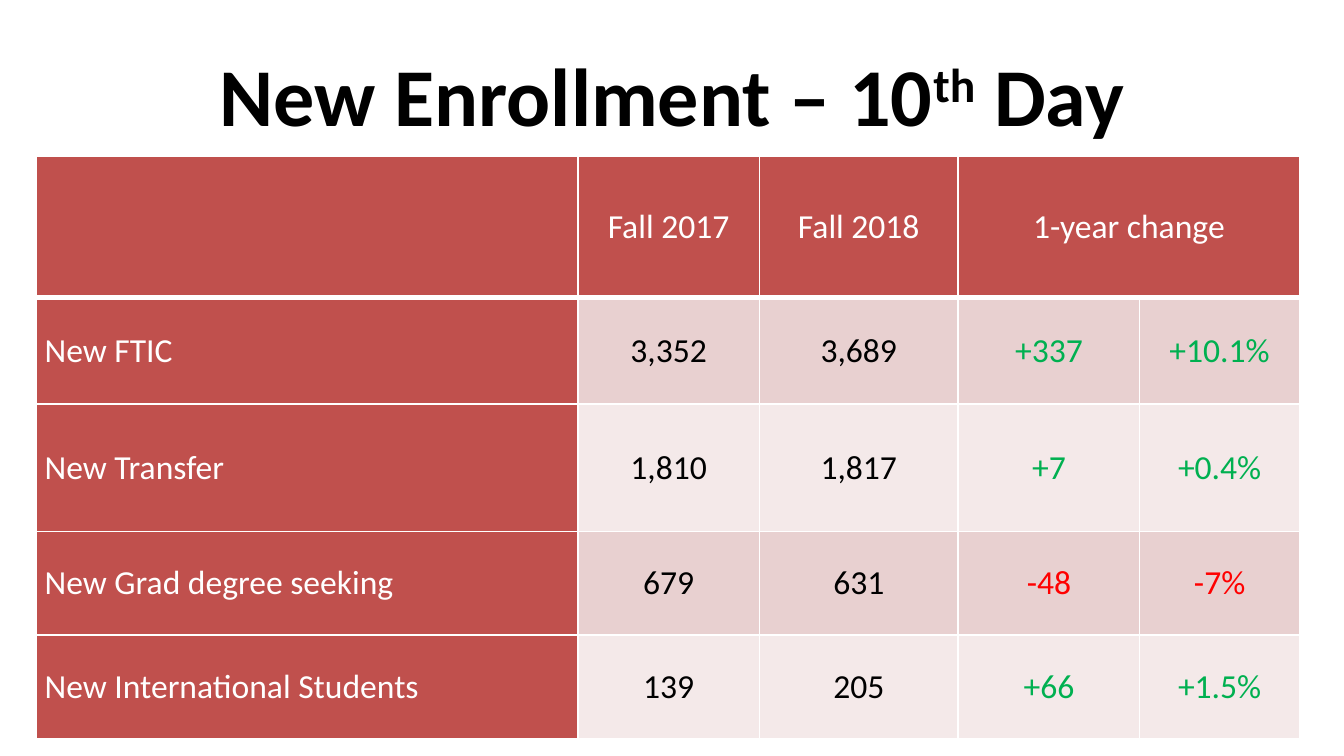
"""Build the new enrollment slide with its year-over-year table."""
from dataclasses import dataclass

from lxml import etree
from pptx import Presentation
from pptx.dml.color import RGBColor
from pptx.enum import text as t
from pptx.oxml import ns
from pptx.util import Pt

RED, WHITE, BLACK = "C0504D", "FFFFFF", "000000"
GAIN, LOSS = "00B050", "FF0000"
BANDS = ("E8D0D0", "F4E9E9")
COL_WIDTHS = (290.16, 97.2, 106.56, 97.2, 85.68)
ROW_HEIGHTS = (75.6, 56.88, 68.4, 55.44, 55.44)
HEADINGS = ("", "Fall 2017", "Fall 2018", "1-year change", "")


@dataclass
class Enrollment:
    group: str
    fall_2017: str
    fall_2018: str
    change: str
    percent: str


ENROLLMENTS = (
    Enrollment("New FTIC", "3,352", "3,689", "+337", "+10.1%"),
    Enrollment("New Transfer", "1,810", "1,817", "+7", "+0.4%"),
    Enrollment("New Grad degree seeking", "679", "631", "-48", "-7%"),
    Enrollment("New International Students", "139", "205", "+66", "+1.5%"),
)


def rgb(value: str) -> RGBColor:
    return RGBColor.from_string(value)


def add_run(p, text: str, *, size: float = 18, color: str = BLACK,
            bold: bool = False, baseline: int = 0) -> None:
    r = p.add_run()
    r.text = text
    r.font.name = "Calibri"
    r.font.size = Pt(size)
    r.font.bold = bold
    r.font.color.rgb = rgb(color)
    if baseline:
        r._r.get_or_add_rPr().set("baseline", str(baseline * 1000))


def set_borders(cell, bottom: float = 1) -> None:
    tc_pr = cell._tc.get_or_add_tcPr()
    for side, width in (("L", 1), ("R", 1), ("T", 1), ("B", bottom)):
        ln = etree.SubElement(tc_pr, ns.qn(f"a:ln{side}"), w=str(Pt(width)))
        fill = etree.SubElement(ln, ns.qn("a:solidFill"))
        etree.SubElement(fill, ns.qn("a:srgbClr"), val=WHITE)


def fill_cell(cell, text: str, *, fill: str, color: str,
              align=t.PP_ALIGN.CENTER, bottom: float = 1) -> None:
    set_borders(cell, bottom)
    cell.fill.solid()
    cell.fill.fore_color.rgb = rgb(fill)
    cell.vertical_anchor = t.MSO_ANCHOR.MIDDLE
    cell.margin_left = cell.margin_right = Pt(4.5)
    cell.margin_top = cell.margin_bottom = 0
    p = cell.text_frame.paragraphs[0]
    p.alignment = align
    if text:
        add_run(p, text, color=color)


def add_title(s) -> None:
    sp = s.shapes.title
    sp.left, sp.top, sp.width, sp.height = Pt(36), Pt(16.56), Pt(648), Pt(67.68)
    tf = sp.text_frame
    tf.auto_size = t.MSO_AUTO_SIZE.NONE
    tf.vertical_anchor = t.MSO_ANCHOR.MIDDLE
    p = tf.paragraphs[0]
    p.alignment = t.PP_ALIGN.CENTER
    for text, baseline in (("New Enrollment – 10", 0), ("th", 30), (" Day", 0)):
        add_run(p, text, size=44, bold=True, baseline=baseline)


def add_enrollment_table(s) -> None:
    table = s.shapes.add_table(
        len(ROW_HEIGHTS), len(COL_WIDTHS), Pt(19.44), Pt(83.88),
        Pt(sum(COL_WIDTHS)), Pt(sum(ROW_HEIGHTS))).table
    table.first_row = table.horz_banding = False
    for column, width in zip(table.columns, COL_WIDTHS):
        column.width = Pt(width)
    for row, height in zip(table.rows, ROW_HEIGHTS):
        row.height = Pt(height)
    for j, heading in enumerate(HEADINGS):
        fill_cell(table.cell(0, j), heading, fill=RED, color=WHITE, bottom=3)
    table.cell(0, 3).merge(table.cell(0, 4))
    for i, e in enumerate(ENROLLMENTS):
        fill_cell(table.cell(i + 1, 0), e.group, fill=RED, color=WHITE,
                  align=t.PP_ALIGN.LEFT)
        trend = LOSS if e.change.startswith("-") else GAIN
        values = ((e.fall_2017, BLACK), (e.fall_2018, BLACK),
                  (e.change, trend), (e.percent, trend))
        for j, (value, color) in enumerate(values, start=1):
            fill_cell(table.cell(i + 1, j), value, fill=BANDS[i % 2], color=color)


def main() -> None:
    prs = Presentation()
    prs.slide_width, prs.slide_height = Pt(720), Pt(405)
    s = prs.slides.add_slide(prs.slide_layouts.get_by_name("Title Only"))
    add_title(s)
    add_enrollment_table(s)
    prs.save("out.pptx")


if __name__ == "__main__":
    main()
